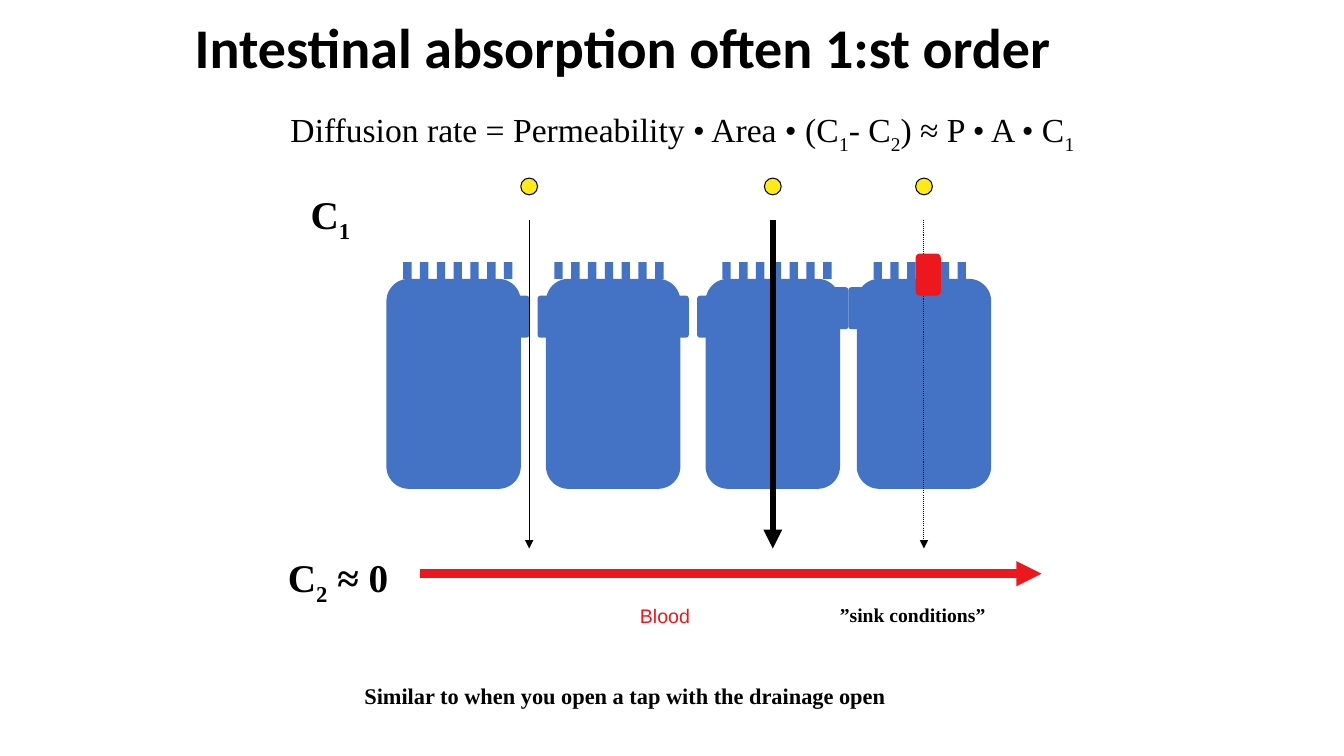
from lxml import etree
from pptx import Presentation, util as u
from pptx.dml.color import RGBColor
from pptx.enum import dml, shapes, text
from pptx.oxml import ns

PX = u.Inches(1) // 120
BLACK = RGBColor(0x00, 0x00, 0x00)
BLUE = RGBColor(0x44, 0x72, 0xC4)
RED = RGBColor(0xED, 0x18, 0x1E)
YELLOW = RGBColor(0xFF, 0xEA, 0x18)
RECT = shapes.MSO_SHAPE.RECTANGLE
ROUND = shapes.MSO_SHAPE.ROUNDED_RECTANGLE
OVAL = shapes.MSO_SHAPE.OVAL

prs = Presentation()
prs.slide_width, prs.slide_height = 1600 * PX, 900 * PX
s = prs.slides.add_slide(prs.slide_layouts[6])


def add_text(content, box, size, font="Times New Roman", color=BLACK, bold=False,
             wrap=False, anchor=text.MSO_ANCHOR.TOP, spacing=1.0):
    tf = s.shapes.add_textbox(*[v * PX for v in box]).text_frame
    tf.word_wrap = wrap
    tf.vertical_anchor = anchor
    p = tf.paragraphs[0]
    p.line_spacing = spacing
    for i, part in enumerate(content.split("|")):
        if not part:
            continue
        r = p.add_run()
        r.text = part
        r.font.name, r.font.size, r.font.bold = font, u.Pt(size), bold
        r.font.color.rgb = color
        if i % 2:
            r._r.get_or_add_rPr().set("baseline", "-25000")


def add_shape(kind, box, fill, outline=None):
    sp = s.shapes.add_shape(kind, *[v * PX for v in box])
    sp.shadow.inherit = False
    sp.fill.solid()
    sp.fill.fore_color.rgb = fill
    if outline is None:
        sp.line.fill.background()
    else:
        sp.line.color.rgb = outline
        sp.line.width = u.Pt(0.75)


add_text("Intestinal absorption often 1:st order", (220, 17, 1141, 86), 40,
         font="Calibri", bold=True, wrap=True, anchor=text.MSO_ANCHOR.MIDDLE, spacing=0.9)
add_text("Diffusion rate = Permeability • Area • (C|1|- C|2|) ≈ P • A • C|1|",
         (334, 124, 971, 61), 24)

for x in (460, 650, 840, 1020):
    add_shape(ROUND, (x, 332, 160, 250), BLUE)

for x, y in ((610, 352), (640, 352), (800, 352), (830, 352), (990, 342), (1010, 342)):
    add_shape(ROUND, (x, y, 20, 50), BLUE)

for x, slots in ((480, range(7)), (660, range(7)), (860, range(7)), (1040, (0, 1, 2, 4, 5))):
    for slot in slots:
        add_shape(RECT, (x + 20 * slot, 312, 10, 20), BLUE)

arrows = (
    (630, 262, 630, 653, BLACK, 0.75, None),
    (920, 262, 920, 653, BLACK, 4.5, None),
    (1100, 262, 1100, 653, BLACK, 0.75, dml.MSO_LINE.ROUND_DOT),
    (500, 683, 1240, 683, RED, 6, None),
)
for x1, y1, x2, y2, color, width, dash in arrows:
    c = s.shapes.add_connector(shapes.MSO_CONNECTOR.STRAIGHT, x1 * PX, y1 * PX, x2 * PX, y2 * PX)
    c.line.color.rgb = color
    c.line.width = u.Pt(width)
    if dash:
        c.line.dash_style = dash
    ln = c.line._get_or_add_ln()
    etree.SubElement(ln, ns.qn("a:tailEnd"), type="triangle")
    etree.SubElement(c._element.spPr, ns.qn("a:effectLst"))

for x in (630, 920, 1100):
    add_shape(OVAL, (x - 10, 212, 20, 20), YELLOW, outline=BLACK)

add_shape(ROUND, (1090, 302, 30, 50), RED)

add_text("C|1|", (358, 221, 74, 68), 28, bold=True)
add_text("C|2| ≈ 0", (331, 653, 148, 68), 28, bold=True)
add_text("Blood", (750, 713, 84, 41), 14, font="Arial", color=RED)
add_text("”sink conditions”", (988, 712, 199, 41), 14, bold=True)
add_text("Similar to when you open a tap with the drainage open", (422, 806, 653, 44), 16, bold=True)

prs.save("out.pptx")
